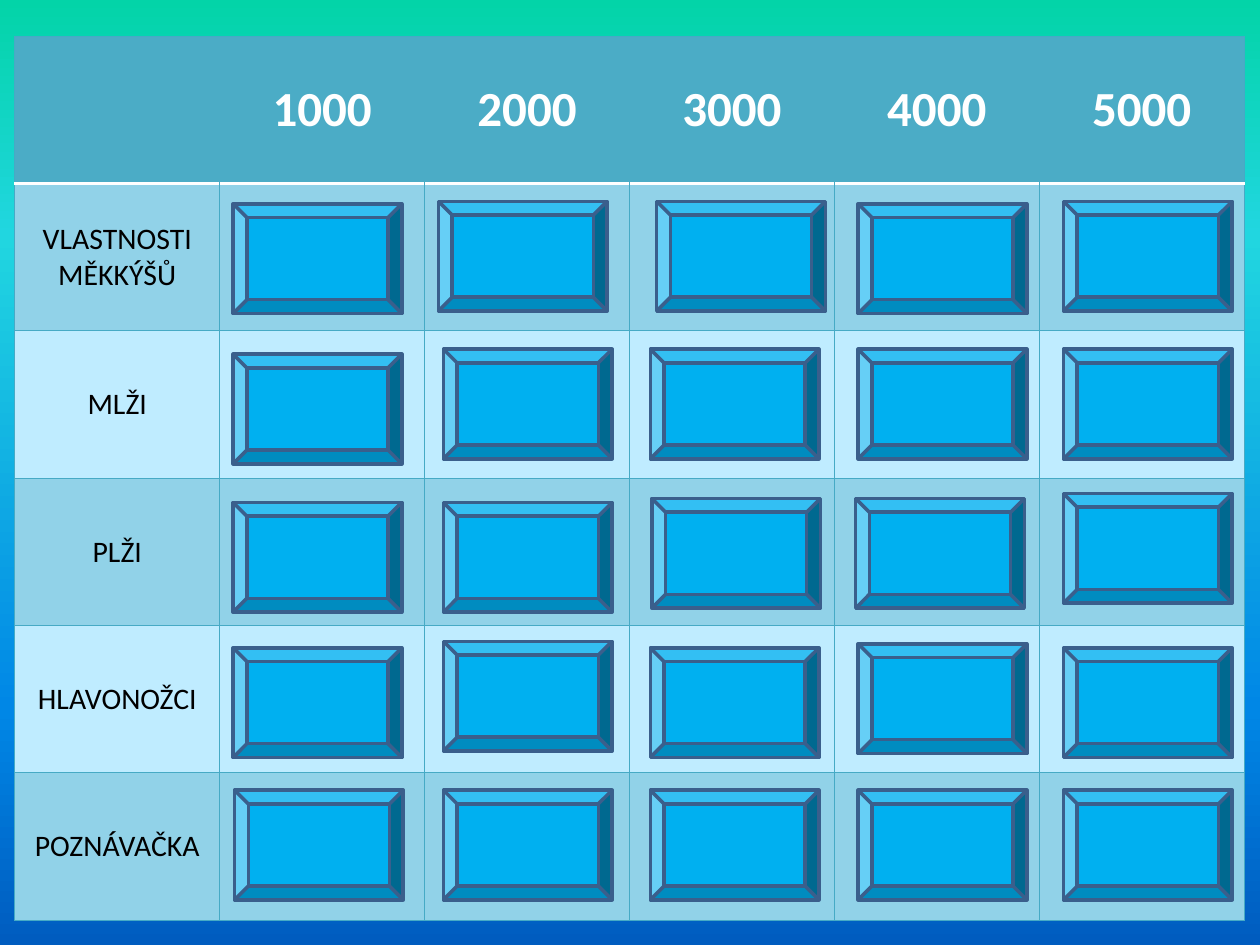
from dataclasses import dataclass
from itertools import product

from pptx import Presentation
from pptx.dml.color import RGBColor as RGB
from pptx.enum.shapes import MSO_SHAPE as Shape
from pptx.enum.text import MSO_ANCHOR as Anchor, PP_ALIGN as Align
from pptx.oxml import parse_xml
from pptx.oxml.ns import nsdecls
from pptx.util import Cm, Pt


@dataclass(frozen=True)
class Theme:
    font: str = "Calibri"
    head: str = "4BACC6"
    dark: str = "91D2E8"
    light: str = "BFECFF"
    grid: str = "46AAC5"
    white: str = "FFFFFF"
    black: str = "000000"
    key: str = "00B0F0"
    edge: str = "3A5F8C"
    sky: tuple = ((0, "03D4A8"), (25, "21D6E0"), (75, "0087E6"), (100, "005CBF"))
    big: int = 28
    small: int = 17


theme = Theme()


def add_edge(cell, side, color, width):
    """Add one border; call before the fill is set, in the order L, R, T, B."""
    paint = f'<a:solidFill><a:srgbClr val="{color}"/></a:solidFill>' if color else "<a:noFill/>"
    cell._tc.get_or_add_tcPr().append(parse_xml(
        f'<a:ln{side} {nsdecls("a")} w="{Pt(width)}">{paint}</a:ln{side}>'))


deck = Presentation()
deck.slide_width, deck.slide_height = Cm(25.4), Cm(19.05)
slide = deck.slides.add_slide(deck.slide_layouts[6])

# Background
stops = "".join(f'<a:gs pos="{pos * 1000}"><a:srgbClr val="{color}"/></a:gs>'
                for pos, color in theme.sky)
slide.element.cSld.insert(0, parse_xml(
    f'<p:bg {nsdecls("p", "a")}><p:bgPr><a:gradFill rotWithShape="1">'
    f'<a:gsLst>{stops}</a:gsLst><a:lin ang="5400000" scaled="0"/></a:gradFill>'
    f'<a:effectLst/></p:bgPr></p:bg>'))

# Board
points = ["", "1000", "2000", "3000", "4000", "5000"]
topics = ["VLASTNOSTI MĚKKÝŠŮ", "MLŽI", "PLŽI", "HLAVONOŽCI", "POZNÁVAČKA"]
size = 6
wide, high = 4.13, 2.97
table = slide.shapes.add_table(size, size, Cm(0.3), Cm(0.73),
                               Cm(size * wide), Cm(size * high)).table
for col in table.columns:
    col.width = Cm(wide)
for row in table.rows:
    row.height = Cm(high)

for r, c in product(range(size), repeat=2):
    cell = table.cell(r, c)
    top = r == 0
    add_edge(cell, "L", None if top and c > 0 else theme.grid, 0.75)
    add_edge(cell, "R", None if top and c < size - 1 else theme.grid, 0.75)
    add_edge(cell, "T", theme.white if r == 1 else theme.grid, 2 if r == 1 else 0.75)
    add_edge(cell, "B", theme.white if top else theme.grid, 2 if top else 0.75)
    cell.fill.solid()
    color = theme.head if top else theme.dark if r % 2 else theme.light
    cell.fill.fore_color.rgb = RGB.from_string(color)
    text = points[c] if top else topics[r - 1] if c == 0 else ""
    if text:
        cell.vertical_anchor = Anchor.MIDDLE
        cell.text_frame.text = text
        para = cell.text_frame.paragraphs[0]
        para.alignment = Align.CENTER
        font = para.runs[0].font
        font.name, font.bold = theme.font, top
        font.size = Pt(theme.big if top else theme.small)
        font.color.rgb = RGB.from_string(theme.white if top else theme.black)

# Keys: a grid, with a few keys set slightly off it
lefts = [4.7, 8.94, 13.11, 17.3, 21.44]
tops = [4.11, 7.04, 10.13, 13.06, 15.93]
shifts = {
    (0, 1): (0, 0.1), (0, 4): (0.03, 0),
    (1, 0): (-0.1, -0.05), (1, 3): (0, -0.13),
    (2, 0): (0.13, -0.05), (2, 2): (0.03, -0.08),
    (3, 2): (-0.05, -0.08), (3, 3): (0, -0.08),
    (4, 0): (0, -0.05), (4, 2): (0, -0.18),
}
for (c, left), (r, top) in product(enumerate(lefts), enumerate(tops)):
    dx, dy = shifts.get((c, r), (0, 0))
    key = slide.shapes.add_shape(Shape.BEVEL, Cm(left + dx), Cm(top + dy), Cm(3.4), Cm(2.21))
    key.shadow.inherit = False
    key.fill.solid()
    key.fill.fore_color.rgb = RGB.from_string(theme.key)
    key.line.color.rgb = RGB.from_string(theme.edge)
    key.line.width = Pt(2)

deck.save("out.pptx")
